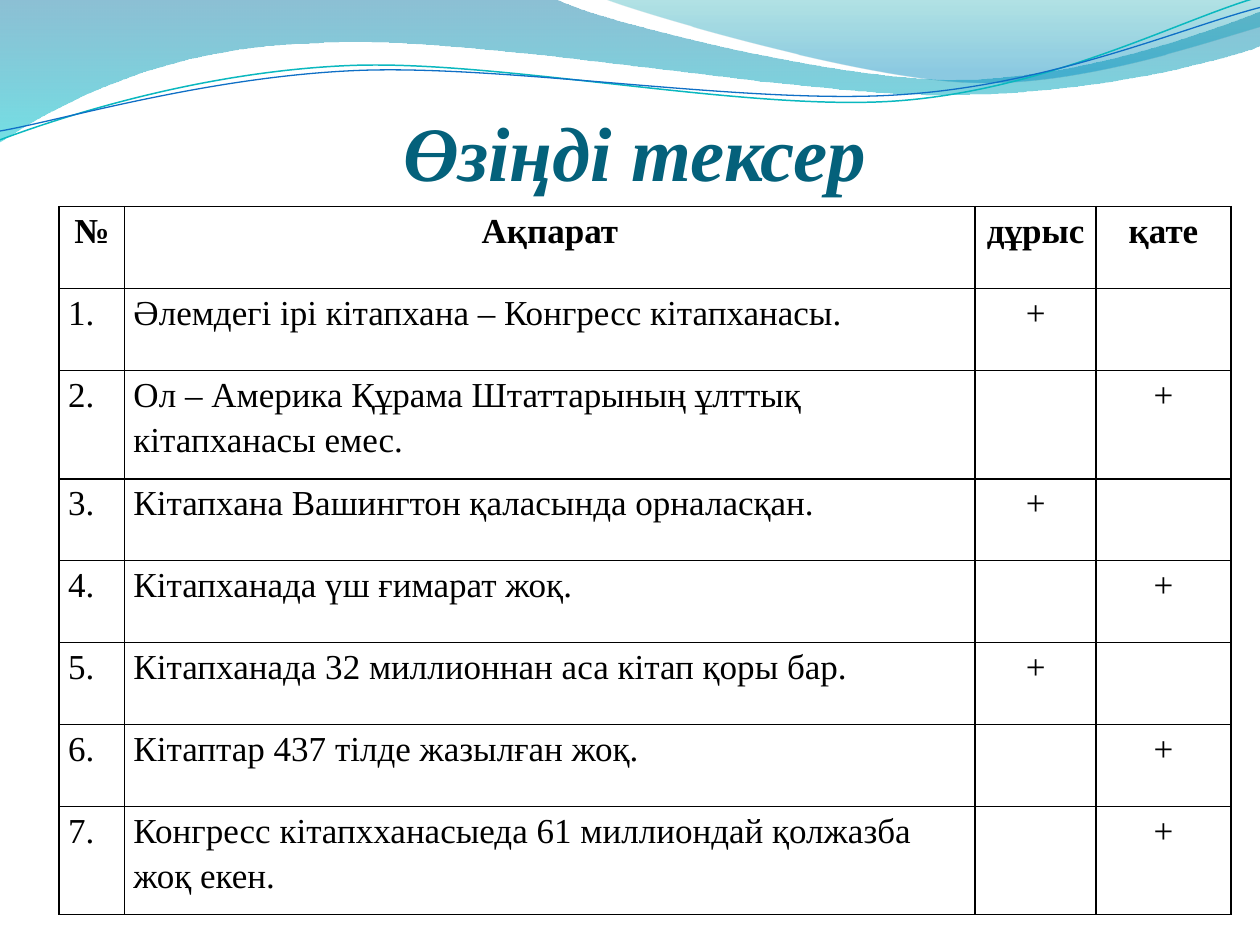
import math

from lxml import etree
from pptx import Presentation, util as u
from pptx.dml.color import RGBColor
from pptx.enum import text
from pptx.oxml import ns

THEME = dict(font="Times New Roman", title="04617B", ink="000000",
             title_size=44, body_size=20, border=1)

TITLE = "Өзіңді тексер"
HEADER = ("№", "Ақпарат", "дұрыс", "қате")
STATEMENTS = [  # (statement, is it true)
    ("Әлемдегі ірі кітапхана – Конгресс кітапханасы.", True),
    ("Ол – Америка Құрама Штаттарының ұлттық кітапханасы емес.", False),
    ("Кітапхана Вашингтон қаласында орналасқан.", True),
    ("Кітапханада үш ғимарат жоқ.", False),
    ("Кітапханада 32 миллионнан аса кітап қоры бар.", True),
    ("Кітаптар 437 тілде жазылған жоқ.", False),
    ("Конгресс кітапхханасыеда 61 миллиондай қолжазба жоқ екен.", False),
]
COL_WIDTHS = (0.52, 6.75, 0.96, 1.07)
ROW_HEIGHT, TALL_ROW, LONG_TEXT = 0.65, 0.86, 50

# A pair is a straight step; six numbers are a Bezier step.
# Gradient stops: (position, colour, opacity in percent)
WAVES = [
    ([(0, 0), (4.4, -0.01), (4.76, 0.17, 6.64, 0.63, 7.58, 0.63),
      (8.53, 0.63, 9.58, 0.26, 10, 0.09), (10.01, 0.36),
      (9.83, 0.44, 8.7, 0.76, 7.46, 0.75), (6.22, 0.75, 3.82, 0.28, 2.57, 0.34),
      (1.29, 0.36, 0.46, 0.83, -0.01, 1.13), (0, 0)],
     [(0, "0074A1", 45), (1, "00C6CF", 55)]),
    ([(4.79, -0.01), (5.09, 0.11, 6.82, 0.62, 7.69, 0.65),
      (8.56, 0.69, 9.61, 0.32, 10, 0.21), (10, 0), (4.79, -0.01)],
     [(0, "00A1A9", 30), (0.8, "008BBF", 45)]),
]
STRAND_TILT = -2.7
STRANDS = [  # (steps, centre of the tilt, colour, width)
    ([(0, 1.11), (0.48, 0.93, 1.58, 0.57, 2.77, 0.52),
      (3.95, 0.47, 5.93, 0.89, 7.13, 0.8), (8.33, 0.71, 9.38, 0.15, 9.98, -0.02)],
     (4.99, 0.58), "0AB8BF", 0.85),
    ([(0, 1.04), (0.47, 0.96, 1.64, 0.61, 2.83, 0.56),
      (4.03, 0.51, 5.97, 0.84, 7.17, 0.75), (8.36, 0.67, 9.41, 0.21, 10, 0.06)],
     (5, 0.59), "0F6FC6", 0.75),
]


def rgb(value):
    return RGBColor.from_string(value)


def turn(step, centre, degrees):
    """Rotate every point of a step clockwise about the centre."""
    cos, sin = math.cos(math.radians(degrees)), math.sin(math.radians(degrees))
    turned = []
    for x, y in zip(step[::2], step[1::2]):
        dx, dy = x - centre[0], y - centre[1]
        turned += [centre[0] + dx * cos - dy * sin, centre[1] + dx * sin + dy * cos]
    return tuple(turned)


def add_curve(s, steps, close):
    """Build a freeform on all points, then join Bezier steps into curves."""
    points = [(u.Inches(x), u.Inches(y))
              for step in steps for x, y in zip(step[::2], step[1::2])]
    builder = s.shapes.build_freeform(*points[0])
    builder.add_line_segments(points[1:], close=close)
    sp = builder.convert_to_shape()
    sp.shadow.inherit = False
    path = next(sp._element.iter(ns.qn("a:path")))
    lines = iter(path.findall(ns.qn("a:lnTo")))
    for step in steps[1:]:
        first = next(lines)
        if len(step) == 6:
            first.tag = ns.qn("a:cubicBezTo")
            for _ in range(2):
                line = next(lines)
                first.append(line[0])
                path.remove(line)
    return sp


def add_wave(s, steps, stops):
    sp = add_curve(s, steps, True)
    sp.line.fill.background()
    sp.fill.gradient()
    sp.fill.gradient_angle = 270
    for stop, (position, color, _) in zip(sp.fill.gradient_stops, stops):
        stop.position, stop.color.rgb = position, rgb(color)
    colors = sp.fill._xPr.iter(ns.qn("a:srgbClr"))
    for clr, (_, _, opacity) in zip(colors, stops):
        etree.SubElement(clr, ns.qn("a:alpha"), val=str(opacity * 1000))


def add_strand(s, steps, centre, color, width):
    sp = add_curve(s, [turn(step, centre, -STRAND_TILT) for step in steps], False)
    sp.rotation = STRAND_TILT
    sp.fill.background()
    sp.line.color.rgb, sp.line.width = rgb(color), u.Pt(width)


def write(tf, words, size, color, align=None, spacing=None, **fmt):
    p = tf.paragraphs[0]
    p.alignment, p.line_spacing = align, spacing
    r = p.add_run()
    r.text = words
    r.font.color.rgb = rgb(color)
    for name, value in dict(name=THEME["font"], size=u.Pt(size), **fmt).items():
        setattr(r.font, name, value)


def add_title(s):
    tf = s.shapes.add_textbox(*map(u.Inches, (0.5, 0.77, 9.08, 0.79))).text_frame
    frame = dict(word_wrap=True, vertical_anchor=text.MSO_ANCHOR.BOTTOM, margin_left=0,
                 margin_top=u.Inches(0.05), margin_right=0, margin_bottom=0)
    for name, value in frame.items():
        setattr(tf, name, value)
    write(tf, TITLE, THEME["title_size"], THEME["title"],
          text.PP_ALIGN.CENTER, bold=True, italic=True)


def format_cell(cell):
    """Clear the fill, set the margins and draw all four borders."""
    cell.fill.background()
    margins = dict(margin_left=0.07, margin_right=0.07, margin_top=0, margin_bottom=0)
    for name, value in margins.items():
        setattr(cell, name, u.Inches(value))
    props = cell._tc.get_or_add_tcPr()
    for i, side in enumerate("LRTB"):
        ln = etree.Element(ns.qn(f"a:ln{side}"), w=str(u.Pt(THEME["border"])))
        fill = etree.SubElement(ln, ns.qn("a:solidFill"))
        etree.SubElement(fill, ns.qn("a:srgbClr"), val=THEME["ink"])
        props.insert(i, ln)


def add_answers(s):
    rows = [HEADER] + [(f"{n}.", words, "+" if true else "", "" if true else "+")
                       for n, (words, true) in enumerate(STATEMENTS, 1)]
    heights = [TALL_ROW if len(row[1]) > LONG_TEXT else ROW_HEIGHT for row in rows]
    box = (0.47, 1.64, sum(COL_WIDTHS), sum(heights))
    table = s.shapes.add_table(len(rows), len(HEADER), *map(u.Inches, box)).table
    for col, width in zip(table.columns, COL_WIDTHS):
        col.width = u.Inches(width)
    for i, (row, height) in enumerate(zip(rows, heights)):
        table.rows[i].height = u.Inches(height)
        for j, words in enumerate(row):
            cell = table.cell(i, j)
            format_cell(cell)
            centred = i == 0 or j > 1
            if words:
                write(cell.text_frame, words, THEME["body_size"], THEME["ink"],
                      text.PP_ALIGN.CENTER if centred else text.PP_ALIGN.LEFT,
                      1.15, bold=i == 0)


def main():
    prs = Presentation()
    prs.slide_width, prs.slide_height = u.Inches(10), u.Inches(7.5)
    s = prs.slides.add_slide(prs.slide_layouts[6])
    for wave in WAVES:
        add_wave(s, *wave)
    for strand in STRANDS:
        add_strand(s, *strand)
    add_title(s)
    add_answers(s)
    prs.save("out.pptx")


if __name__ == "__main__":
    main()
